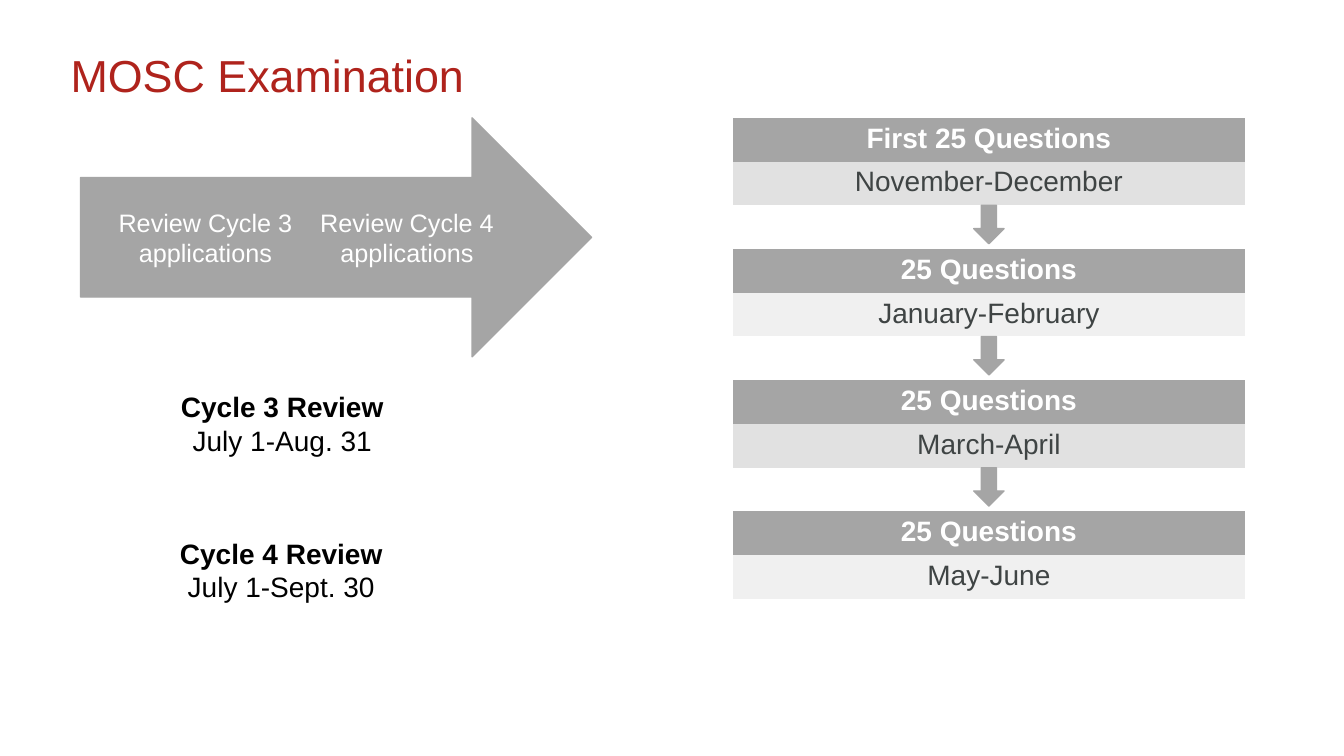
from lxml import etree
from pptx import Presentation
from pptx.dml.color import RGBColor
from pptx.enum.shapes import MSO_SHAPE
from pptx.enum.text import MSO_ANCHOR, PP_ALIGN
from pptx.oxml.ns import qn
from pptx.util import Pt

RED = RGBColor(0xAF, 0x23, 0x1C)
GRAY = RGBColor(0xA5, 0xA5, 0xA5)
BAND_DARK = RGBColor(0xE1, 0xE1, 0xE1)
BAND_LIGHT = RGBColor(0xF0, 0xF0, 0xF0)
SLATE = RGBColor(0x3F, 0x44, 0x44)
BLACK = RGBColor(0, 0, 0)
WHITE = RGBColor(0xFF, 0xFF, 0xFF)

CENTER = PP_ALIGN.CENTER
LEFT = PP_ALIGN.LEFT
TOP = MSO_ANCHOR.TOP
MIDDLE = MSO_ANCHOR.MIDDLE
RIGHT_ARROW = MSO_SHAPE.RIGHT_ARROW
DOWN_ARROW = MSO_SHAPE.DOWN_ARROW

FONT = "Arial"
PLAIN_TABLE = "{2D5ABB26-0587-4C30-8999-92F81FD0307C}"
SCHEDULE = [
    ("First 25 Questions", "November-December"),
    ("25 Questions", "January-February"),
    ("25 Questions", "March-April"),
    ("25 Questions", "May-June"),
]


def add_run(paragraph, text, size, color, bold=False, align=CENTER):
    paragraph.alignment = align
    run = paragraph.add_run()
    run.text = text
    run.font.name = FONT
    run.font.size = Pt(size)
    run.font.color.rgb = color
    run.font.bold = bold


def add_line(frame, index, text, size, color, bold=False):
    """Write one line, using the frame's first paragraph for index 0."""
    paragraph = frame.add_paragraph() if index else frame.paragraphs[0]
    add_run(paragraph, text, size, color, bold)
    return paragraph


def add_arrow(slide, kind, left, top, width, height):
    arrow = slide.shapes.add_shape(kind, Pt(left), Pt(top), Pt(width), Pt(height))
    arrow.shadow.inherit = False
    arrow.fill.solid()
    arrow.fill.fore_color.rgb = GRAY
    arrow.line.color.rgb = GRAY
    arrow.line.width = Pt(1)
    return arrow


def add_title(slide, left, top, width, height):
    title = slide.shapes.title
    title.left, title.top = Pt(left), Pt(top)
    title.width, title.height = Pt(width), Pt(height)
    frame = title.text_frame
    frame.margin_left = frame.margin_right = 0
    frame.margin_top = frame.margin_bottom = 0
    frame.vertical_anchor = TOP
    frame.paragraphs[0].line_spacing = 0.9
    add_run(frame.paragraphs[0], "MOSC Examination", 32, RED, align=LEFT)


def add_cycle_arrow(slide, left, top, width, height):
    frame = add_arrow(slide, RIGHT_ARROW, left, top, width, height).text_frame
    frame.vertical_anchor = MIDDLE
    lines = ["Review Cycle 3\tReview Cycle 4", "applications\tapplications"]
    for index, text in enumerate(lines):
        paragraph = add_line(frame, index, text, 18, WHITE)
        tabs = etree.SubElement(paragraph._p.get_or_add_pPr(), qn("a:tabLst"))
        etree.SubElement(tabs, qn("a:tab"), pos=str(Pt(144)), algn="l")


def add_review(slide, heading, dates, left, top, width, height):
    box = slide.shapes.add_textbox(Pt(left), Pt(top), Pt(width), Pt(height))
    frame = box.text_frame
    frame.word_wrap = True
    add_line(frame, 0, heading, 20, BLACK, bold=True)
    add_line(frame, 1, dates, 20, BLACK)


def fill_cell(cell, fill, text="", color=WHITE, bold=False):
    cell.fill.solid()
    cell.fill.fore_color.rgb = fill
    if text:
        add_run(cell.text_frame.paragraphs[0], text, 20, color, bold)


def add_schedule(slide, left, top, width, height):
    """Stack question blocks in one table, with a down arrow in each gap row."""
    row_count = 3 * len(SCHEDULE) - 1
    row_height = height / row_count
    table = slide.shapes.add_table(
        row_count, 1, Pt(left), Pt(top), Pt(width), Pt(height)).table
    table._tbl.tblPr.find(qn("a:tableStyleId")).text = PLAIN_TABLE
    for row in table.rows:
        row.height = Pt(row_height)

    arrow_width, arrow_height = 21.6, 27.4
    for index, (questions, months) in enumerate(SCHEDULE):
        first = 3 * index
        band = BAND_LIGHT if index % 2 else BAND_DARK
        fill_cell(table.cell(first, 0), GRAY, questions, WHITE, bold=True)
        fill_cell(table.cell(first + 1, 0), band, months, SLATE)
        gap = first + 2
        if gap < row_count:
            fill_cell(table.cell(gap, 0), WHITE)
            add_arrow(slide, DOWN_ARROW, left + (width - arrow_width) / 2,
                      top + gap * row_height, arrow_width, arrow_height)


def main():
    deck = Presentation()
    deck.slide_width, deck.slide_height = Pt(960), Pt(540)
    slide = deck.slides.add_slide(deck.slide_layouts.get_by_name("Title Only"))
    add_title(slide, 50.4, 38.2, 864, 55.4)
    add_review(slide, "Cycle 3 Review", "July 1-Aug. 31", 83.2, 275, 236.9, 55.4)
    add_review(slide, "Cycle 4 Review", "July 1-Sept. 30", 79.2, 379.4, 243.4, 55.4)
    add_schedule(slide, 523.5, 84.2, 365.8, 343.6)
    add_cycle_arrow(slide, 57.6, 84.2, 365, 170.7)
    deck.save("out.pptx")


if __name__ == "__main__":
    main()
